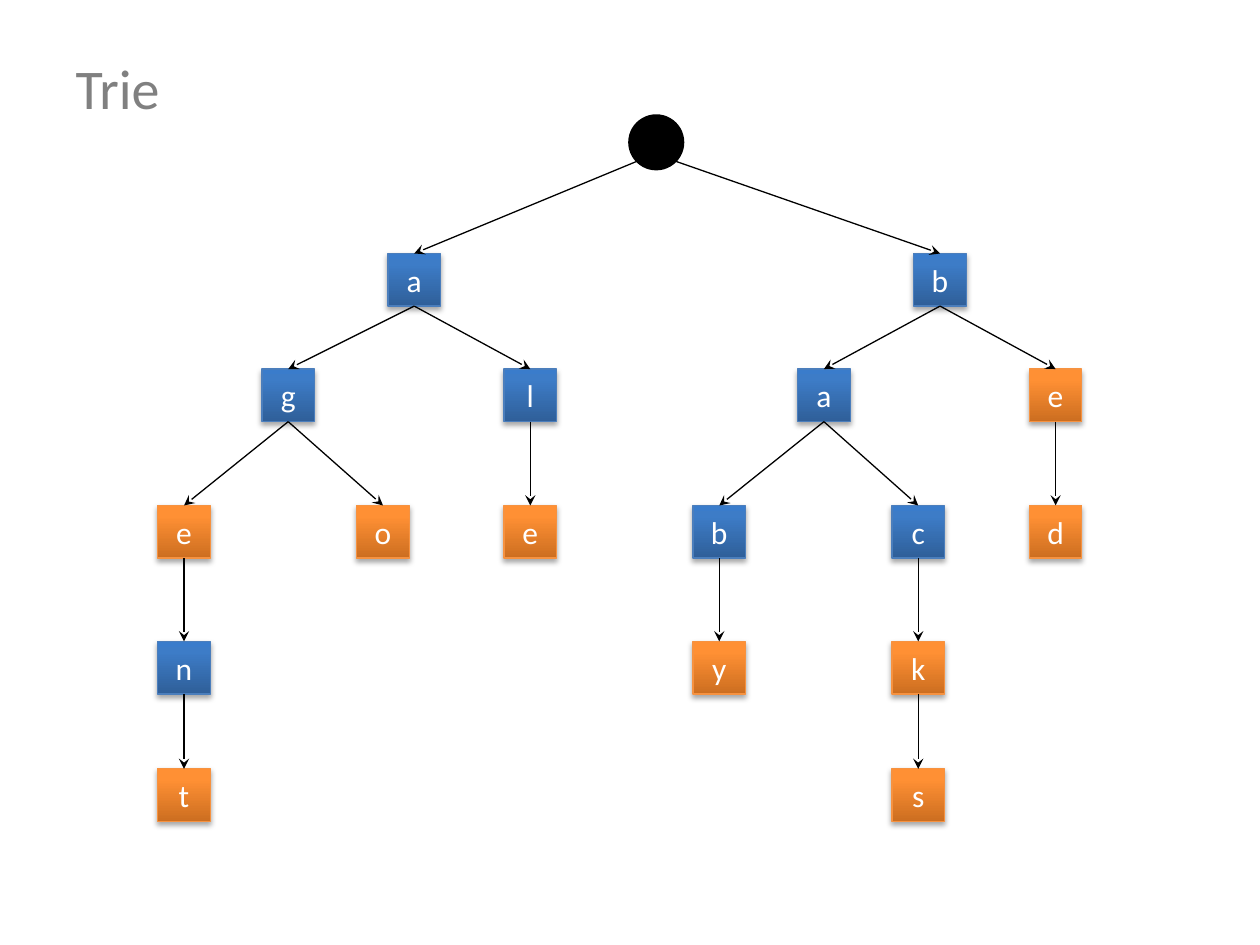
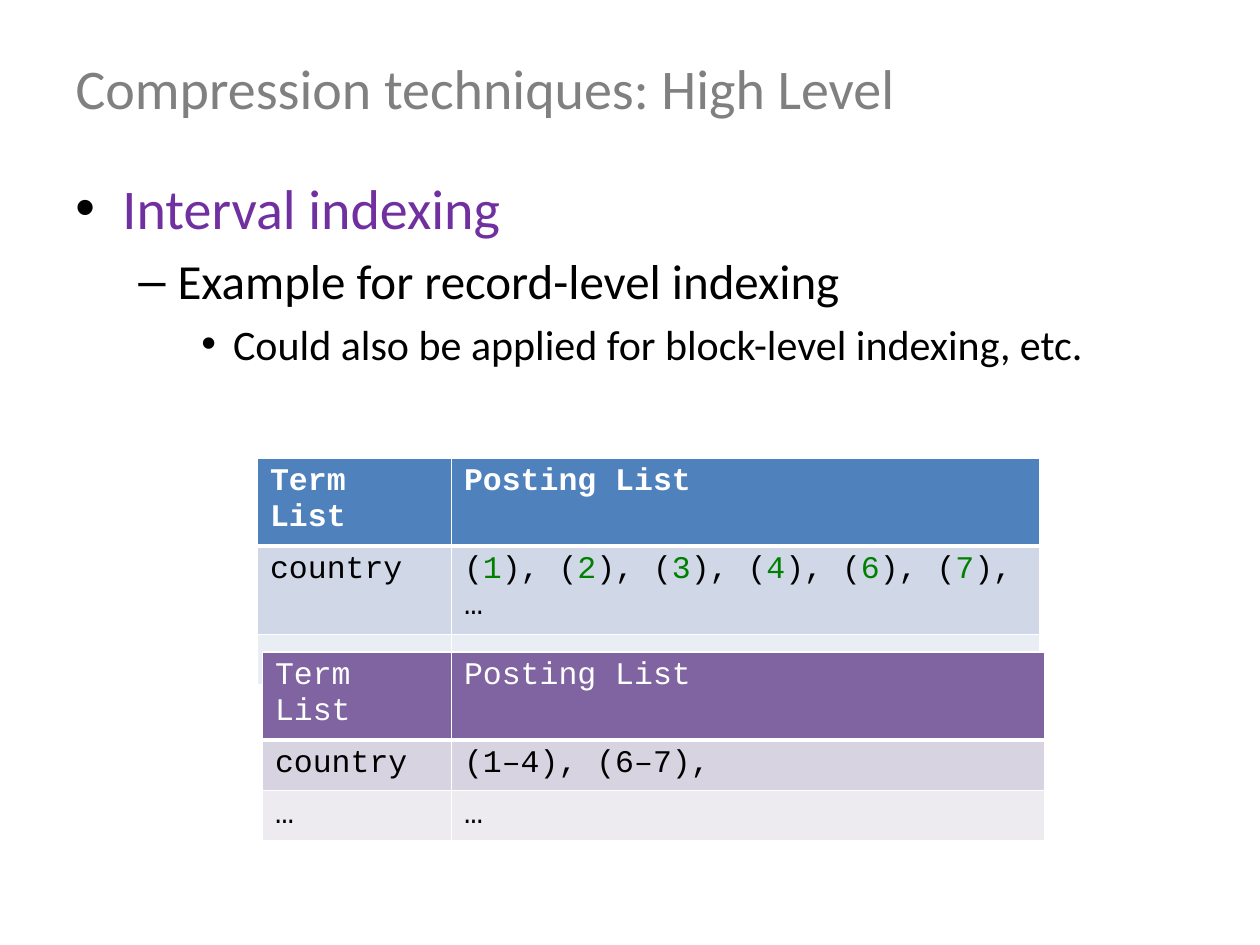
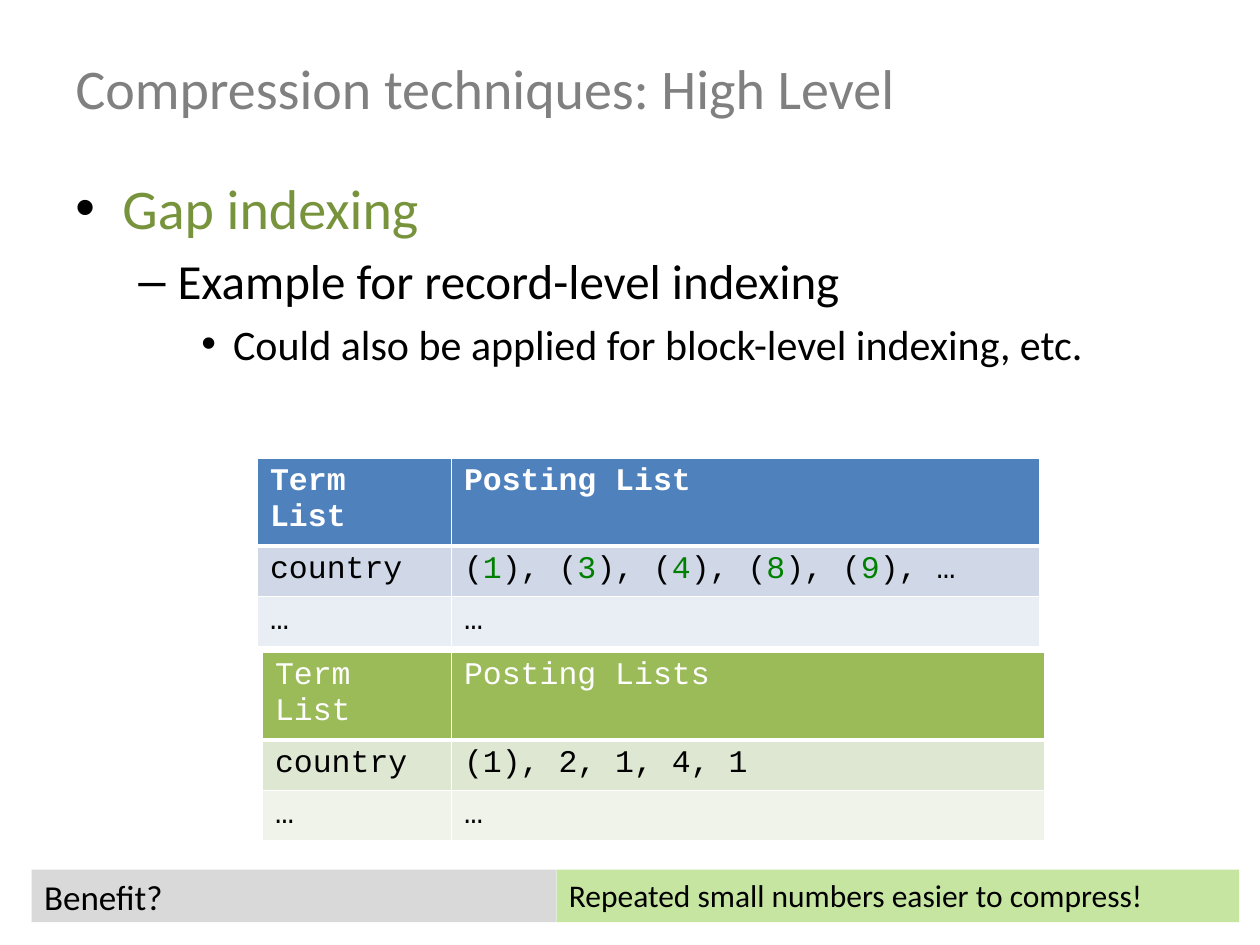
"""Build three slides on tries and on compressing posting lists."""
from itertools import groupby

from lxml import etree
from pptx import Presentation
from pptx.dml.color import RGBColor
from pptx.enum.shapes import MSO_CONNECTOR, MSO_SHAPE
from pptx.enum.text import MSO_ANCHOR, PP_ALIGN
from pptx.oxml import parse_xml
from pptx.oxml.ns import nsdecls, qn
from pptx.util import Cm, Pt

RECTANGLE, OVAL = MSO_SHAPE.RECTANGLE, MSO_SHAPE.OVAL
STRAIGHT = MSO_CONNECTOR.STRAIGHT
TOP, MIDDLE = MSO_ANCHOR.TOP, MSO_ANCHOR.MIDDLE
LEFT, CENTER = PP_ALIGN.LEFT, PP_ALIGN.CENTER
TOP_SITE, BOTTOM_SITE = 0, 2
TITLE_ONLY = 5
SANS, MONO = "Calibri", "Courier New"

COLOURS = {
    "black": "000000", "white": "FFFFFF", "title": "808080", "number": "008000",
    "interval": "7030A0", "gap": "77933C", "question": "D9D9D9", "answer": "C2E49C",
}
PREFIX_STYLE = {"stops": ((0, "2F5F99"), (80, "3D7CC7"), (100, "3A7CCB")), "line": "4B7EBC"}
WORD_STYLE = {"stops": ((0, "CC6E20"), (80, "FF9034"), (100, "FF9136")), "line": "F69240"}
BLUE_ROWS = ("4F81BD", "D0D8E8", "E9EDF4")
PURPLE_ROWS = ("8064A2", "D8D3E0", "EDEAF0")
GREEN_ROWS = ("9BBB59", "DEE7D1", "EFF3EA")

NODE_SIZE = Cm(1.06)
LEVEL_TOPS = (5.11, 7.44, 10.19, 12.93, 15.5)
TRIE = (
    ("a", 7.82, False, (
        ("g", 5.28, False, (
            ("e", 3.18, True, (("n", 3.18, False, (("t", 3.18, True, ()),)),)),
            ("o", 7.19, True, ()),
        )),
        ("l", 10.16, False, (("e", 10.16, True, ()),)),
    )),
    ("b", 18.42, False, (
        ("a", 16.08, False, (
            ("b", 13.97, False, (("y", 13.97, True, ()),)),
            ("c", 17.98, False, (("k", 17.98, True, (("s", 17.98, True, ()),)),)),
        )),
        ("e", 20.75, True, (("d", 20.75, True, ()),)),
    )),
)
BULLETS = (("•", 0.95, 0.95, 32), ("–", 2.06, 0.79, 28), ("•", 3.18, 0.64, 24))


def rgb(name):
    """Turn a colour name or a hex string into a colour."""
    return RGBColor.from_string(COLOURS.get(name, name))


def format_text(para, size, colour, font=SANS, bold=False):
    """Format every run of a paragraph."""
    for span in para.runs:
        span.font.name = font
        span.font.size = Pt(size)
        span.font.bold = bold
        span.font.color.rgb = rgb(colour)


def add_page(deck, title):
    """Add a slide with the shared title style."""
    page = deck.slides.add_slide(deck.slide_layouts[TITLE_ONLY])
    box = page.shapes.title
    box.left, box.top, box.width, box.height = Cm(1.27), Cm(0.76), Cm(22.86), Cm(1.98)
    box.text_frame.text = title
    box.text_frame.vertical_anchor = MIDDLE
    para = box.text_frame.paragraphs[0]
    para.alignment = LEFT
    format_text(para, 32, "title")
    return page


def add_node(page, letter, left, top, style):
    """Add a square trie node with a gradient and a soft shadow."""
    node = page.shapes.add_shape(RECTANGLE, left, top, NODE_SIZE, NODE_SIZE)
    properties = node._element.spPr
    stops = "".join(
        f'<a:gs pos="{place * 1000}"><a:srgbClr val="{colour}"/></a:gs>'
        for place, colour in style["stops"])
    properties.append(parse_xml(
        f'<a:gradFill {nsdecls("a")} rotWithShape="1"><a:gsLst>{stops}</a:gsLst>'
        '<a:lin ang="16200000" scaled="0"/></a:gradFill>'))
    node.line.color.rgb = rgb(style["line"])
    node.line.width = Pt(0.75)
    node.shadow.inherit = False
    properties.find(qn("a:effectLst")).append(parse_xml(
        f'<a:outerShdw {nsdecls("a")} blurRad="{Pt(3.1)}" dist="{Pt(1.8)}" dir="5400000" '
        'rotWithShape="0"><a:srgbClr val="000000"><a:alpha val="35000"/></a:srgbClr>'
        '</a:outerShdw>'))
    node.text_frame.text = letter
    node.text_frame.vertical_anchor = MIDDLE
    para = node.text_frame.paragraphs[0]
    para.alignment = CENTER
    format_text(para, 18, "white")
    return node


def add_arrow(page, start, child):
    """Add an arrow from a point to the top of a child node."""
    arrow = page.shapes.add_connector(STRAIGHT, *start, *start)
    arrow.end_connect(child, TOP_SITE)
    arrow.line.color.rgb = rgb("black")
    arrow.line.width = Pt(0.75)
    properties = arrow._element.spPr
    etree.SubElement(properties.get_or_add_ln(), qn("a:tailEnd"), type="stealth")
    etree.SubElement(properties, qn("a:effectLst"))
    return arrow


def add_branch(page, branch, level=0):
    """Add a node with everything below it and return the node."""
    letter, left, ends_word, children = branch
    style = WORD_STYLE if ends_word else PREFIX_STYLE
    node = add_node(page, letter, Cm(left), Cm(LEVEL_TOPS[level]), style)
    start = node.left + node.width // 2, node.top + node.height
    for child in children:
        arrow = add_arrow(page, start, add_branch(page, child, level + 1))
        arrow.begin_connect(node, BOTTOM_SITE)
    return node


def add_trie(page):
    """Add the round root and the branches below it."""
    root = page.shapes.add_shape(OVAL, Cm(12.7), Cm(2.34), NODE_SIZE, NODE_SIZE)
    root.shadow.inherit = False
    root.fill.solid()
    root.fill.fore_color.rgb = rgb("black")
    root.line.color.rgb = rgb("black")
    root.line.width = Pt(2)
    reach = int(NODE_SIZE / 2 * 0.71)
    centre_x, centre_y = root.left + NODE_SIZE // 2, root.top + NODE_SIZE // 2
    for side, branch in zip((-1, 1), TRIE):
        start = centre_x + side * reach, centre_y + reach
        add_arrow(page, start, add_branch(page, branch))


def add_bullets(page, topic, colour):
    """Add the topic and its two nested remarks."""
    box = page.shapes.add_textbox(Cm(1.27), Cm(3.38), Cm(22.86), Cm(13.64))
    frame = box.text_frame
    frame.word_wrap = True
    lines = (
        (topic, colour),
        ("Example for record-level indexing", "black"),
        ("Could also be applied for block-level indexing, etc.", "black"),
    )
    for level, ((text, tint), (mark, margin, hang, size)) in enumerate(zip(lines, BULLETS)):
        para = frame.add_paragraph() if level else frame.paragraphs[0]
        para.text = text
        para.level = level
        if level:
            para.space_before = Pt(size * 0.2)
        properties = para._p.get_or_add_pPr()
        properties.set("marL", str(Cm(margin)))
        properties.set("indent", str(-Cm(hang)))
        bullet_colour = etree.SubElement(properties, qn("a:buClr"))
        etree.SubElement(bullet_colour, qn("a:srgbClr"), val=COLOURS["black"])
        etree.SubElement(properties, qn("a:buFont"), typeface="Arial")
        etree.SubElement(properties, qn("a:buChar"), char=mark)
        format_text(para, size, tint)


def add_borders(cell, is_header):
    """Give a cell white borders, with a thick one below the header."""
    widths = {"a:lnL": 1, "a:lnR": 1}
    if is_header:
        widths["a:lnT"] = 1
    widths["a:lnB"] = 3 if is_header else 1
    properties = cell._tc.get_or_add_tcPr()
    for tag, width in widths.items():
        border = etree.SubElement(properties, qn(tag), w=str(Pt(width)))
        fill = etree.SubElement(border, qn("a:solidFill"))
        etree.SubElement(fill, qn("a:srgbClr"), val=COLOURS["white"])


def add_postings(page, left, top, columns, rows, fills, emphasis=False):
    """Add a posting table, with bold header and green numbers if emphasised."""
    table = page.shapes.add_table(
        len(rows), len(columns), Cm(left), Cm(top), Cm(sum(columns)), Cm(0.86 * len(rows))).table
    for column, width in zip(table.columns, columns):
        column.width = Cm(width)
    for row_index, (row, fill) in enumerate(zip(rows, fills)):
        is_header = row_index == 0
        for column_index, text in enumerate(row):
            cell = table.cell(row_index, column_index)
            add_borders(cell, is_header)
            cell.fill.solid()
            cell.fill.fore_color.rgb = rgb(fill)
            para = cell.text_frame.paragraphs[0]
            for _, part in groupby(text, str.isdigit):
                para.add_run().text = "".join(part)
            format_text(para, 18, "white" if is_header else "black", MONO, is_header and emphasis)
            for span in para.runs:
                if emphasis and span.text.isdigit():
                    span.font.color.rgb = rgb("number")


def add_bar(page, text, left, width, size, colour, opacity):
    """Add one slightly transparent bar at the foot of the slide."""
    bar = page.shapes.add_shape(RECTANGLE, Cm(left), Cm(17.53), Cm(width), Cm(1.06))
    bar.shadow.inherit = False
    bar.fill.solid()
    bar.fill.fore_color.rgb = rgb(colour)
    tint = bar._element.spPr.find(qn("a:solidFill"))[0]
    etree.SubElement(tint, qn("a:alpha"), val=str(opacity * 1000))
    bar.line.fill.background()
    bar.text_frame.text = text
    bar.text_frame.vertical_anchor = TOP
    para = bar.text_frame.paragraphs[0]
    para.alignment = LEFT
    format_text(para, size, "black")


def add_technique(deck, topic, colour, plain, header, packed, fills):
    """Add a slide comparing a plain posting list with a packed one."""
    page = add_page(deck, "Compression techniques: High Level")
    add_bullets(page, topic, colour)
    rest = ("…", "…")
    plain_rows = (("Term List", "Posting List"), ("country", plain), rest)
    packed_rows = (("Term List", header), ("country", packed), rest)
    add_postings(page, 5.19, 9.23, (3.91, 11.86), plain_rows, BLUE_ROWS, emphasis=True)
    add_postings(page, 5.29, 13.14, (3.81, 11.96), packed_rows, fills)
    return page


def main():
    """Build and save the deck."""
    deck = Presentation()
    deck.slide_width, deck.slide_height = Cm(25.4), Cm(19.05)
    add_trie(add_page(deck, "Trie"))
    add_technique(deck, "Interval indexing", "interval", "(1), (2), (3), (4), (6), (7), …",
                  "Posting List", "(1–4), (6–7),", PURPLE_ROWS)
    page = add_technique(deck, "Gap indexing", "gap", "(1), (3), (4), (8), (9), …",
                         "Posting Lists", "(1), 2, 1, 4, 1", GREEN_ROWS)
    add_bar(page, "Benefit?", 0.64, 10.58, 20, "question", 98)
    add_bar(page, "Repeated small numbers easier to compress!", 11.22, 13.76, 18, "answer", 94)
    deck.save("out.pptx")


if __name__ == "__main__":
    main()
